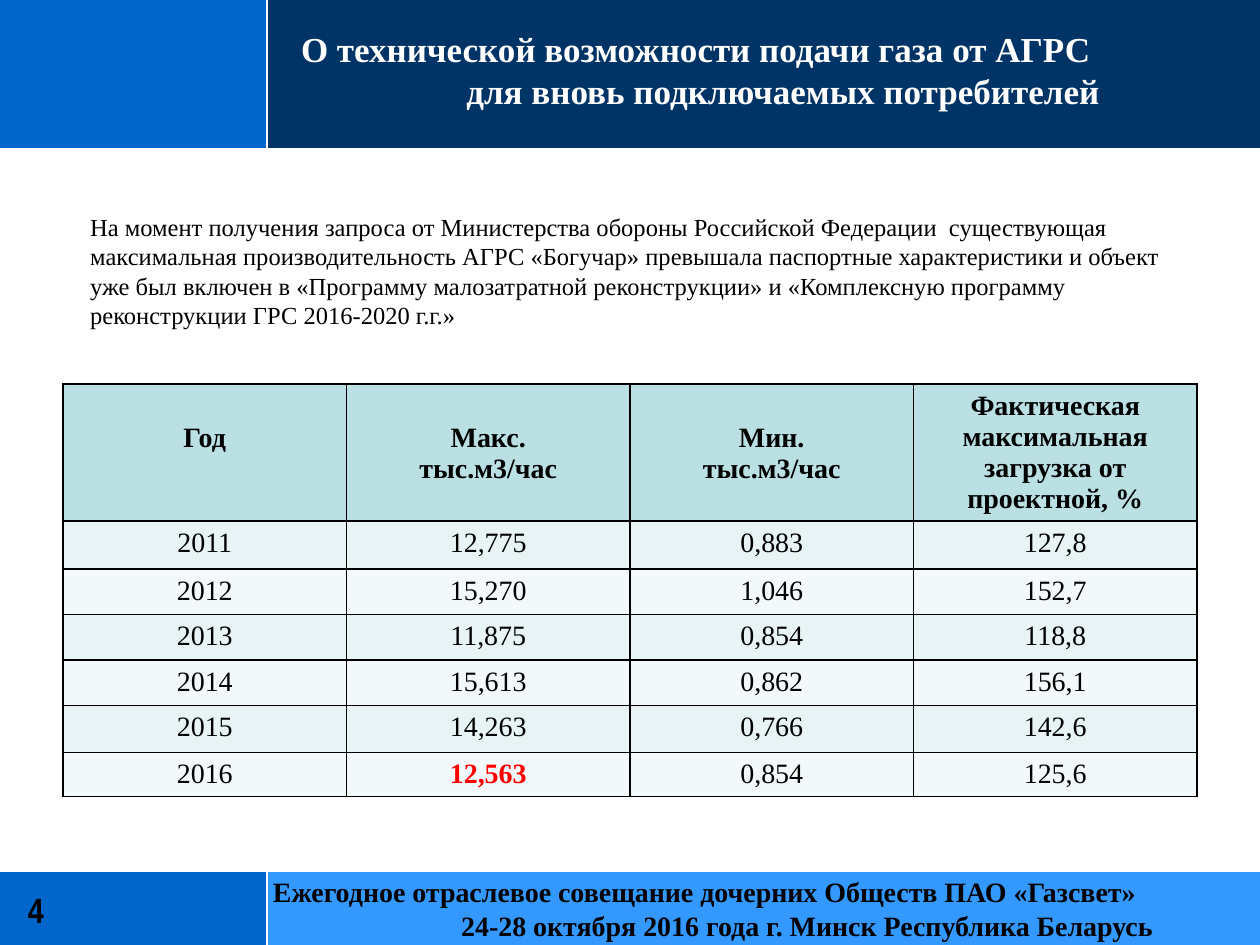
from lxml import etree
from pptx import Presentation
from pptx.dml.color import RGBColor
from pptx.enum.shapes import MSO_CONNECTOR, MSO_SHAPE
from pptx.enum.text import MSO_ANCHOR, MSO_AUTO_SIZE, PP_ALIGN
from pptx.oxml.ns import qn
from pptx.util import Pt

RECTANGLE, STRAIGHT = MSO_SHAPE.RECTANGLE, MSO_CONNECTOR.STRAIGHT
TOP, MIDDLE, BOTTOM = MSO_ANCHOR.TOP, MSO_ANCHOR.MIDDLE, MSO_ANCHOR.BOTTOM
LEFT, CENTER = PP_ALIGN.LEFT, PP_ALIGN.CENTER

BLUE = RGBColor(0x00, 0x66, 0xCC)
NAVY = RGBColor(0x00, 0x33, 0x66)
SKY = RGBColor(0x33, 0x99, 0xFF)
WHITE = RGBColor(0xFF, 0xFF, 0xFF)
BLACK = RGBColor(0x00, 0x00, 0x00)
RED = RGBColor(0xFF, 0x00, 0x00)
HEADER_FILL = RGBColor(0xBB, 0xE0, 0xE3)
ROW_FILLS = [RGBColor(0xE7, 0xF3, 0xF4), RGBColor(0xF3, 0xF9, 0xFA)]
SERIF, NARROW = "Times New Roman", "Arial Narrow"

# Content
TITLE = ["О технической возможности подачи газа от АГРС",
         "для вновь подключаемых потребителей"]
BODY = ["На момент получения запроса от Министерства обороны Российской "
        "Федерации  существующая максимальная производительность АГРС «Богучар» "
        "превышала паспортные характеристики и объект уже был включен в "
        "«Программу малозатратной реконструкции» и «Комплексную программу "
        "реконструкции ГРС 2016-2020 г.г.»"]
FOOTER = ["Ежегодное отраслевое совещание дочерних Обществ ПАО «Газсвет»",
          "24-28 октября 2016 года г. Минск Республика Беларусь"]
PAGE_NUMBER = ["4"]
HEADERS = ["Год", "Макс.\nтыс.м3/час", "Мин.\nтыс.м3/час",
           "Фактическая максимальная загрузка от проектной, %"]
ROWS = [
    ["2011", "12,775", "0,883", "127,8"],
    ["2012", "15,270", "1,046", "152,7"],
    ["2013", "11,875", "0,854", "118,8"],
    ["2014", "15,613", "0,862", "156,1"],
    ["2015", "14,263", "0,766", "142,6"],
    ["2016", "12,563", "0,854", "125,6"],
]
HIGHLIGHT = (6, 1)

# Layout in points
PAGE_W, PAGE_H = 720, 540
SIDE_W, HEAD_H, FOOT_Y = 152.6, 85, 497.5
TABLE_X, TABLE_Y, COLUMN_W = 36, 219.5, 162
ROW_HEIGHTS = [74, 27.4, 26, 26, 26, 26.8, 25.2]
LOWERED_TOP = 22  # moves the short headings down by one line


def add_band(page, x, y, width, height, color):
    band = page.shapes.add_shape(RECTANGLE, Pt(x), Pt(y), Pt(width), Pt(height))
    band.shadow.inherit = False
    band.fill.solid()
    band.fill.fore_color.rgb = color
    band.line.fill.background()


def add_rule(page, x1, y1, x2, y2):
    rule = page.shapes.add_connector(STRAIGHT, Pt(x1), Pt(y1), Pt(x2), Pt(y2))
    rule.line.color.rgb = WHITE
    rule.line.width = Pt(1.25)
    etree.SubElement(rule._element.spPr, qn("a:effectLst"))


def format_text(frame, size, color=BLACK, bold=False, align=LEFT, font=SERIF):
    for paragraph in frame.paragraphs:
        paragraph.alignment = align
        for span in paragraph.runs:
            span.font.name, span.font.size = font, Pt(size)
            span.font.bold, span.font.color.rgb = bold, color


def fill_box(box, bounds, lines, anchor, size, inset=0, indents=(), **style):
    box.left, box.top, box.width, box.height = (Pt(value) for value in bounds)
    frame = box.text_frame
    frame.word_wrap = True
    frame.auto_size = MSO_AUTO_SIZE.NONE
    frame.vertical_anchor = anchor
    frame.margin_left = frame.margin_right = Pt(inset)
    frame.margin_top = frame.margin_bottom = 0
    frame.text = "\n".join(lines)
    for paragraph, indent in zip(frame.paragraphs, indents):
        properties = paragraph._p.get_or_add_pPr()
        properties.set("marL", str(Pt(indent)))
        properties.set("indent", "0")
    format_text(frame, size, **style)


def add_box(page, *args, **kwargs):
    fill_box(page.shapes.add_textbox(0, 0, 0, 0), *args, **kwargs)


def set_borders(cell):
    properties = cell._tc.get_or_add_tcPr()
    for position, side in enumerate(("a:lnL", "a:lnR", "a:lnT", "a:lnB")):
        border = etree.Element(qn(side), w=str(Pt(1)))
        fill = etree.SubElement(border, qn("a:solidFill"))
        etree.SubElement(fill, qn("a:srgbClr"), val=str(BLACK))
        properties.insert(position, border)


def add_load_table(page):
    data = [HEADERS] + ROWS
    columns = len(HEADERS)
    table = page.shapes.add_table(
        len(data), columns, Pt(TABLE_X), Pt(TABLE_Y),
        Pt(columns * COLUMN_W), Pt(sum(ROW_HEIGHTS))).table
    for column in table.columns:
        column.width = Pt(COLUMN_W)
    for r, values in enumerate(data):
        table.rows[r].height = Pt(ROW_HEIGHTS[r])
        for c, value in enumerate(values):
            cell = table.cell(r, c)
            cell.text = value
            cell.vertical_anchor = TOP
            if r == 0 and c < columns - 1:
                cell.margin_top = Pt(LOWERED_TOP)
            cell.fill.solid()
            cell.fill.fore_color.rgb = ROW_FILLS[(r - 1) % 2] if r else HEADER_FILL
            marked = (r, c) == HIGHLIGHT
            format_text(cell.text_frame, 16, RED if marked else BLACK,
                        bold=marked or r == 0, align=CENTER)
            set_borders(cell)


def main():
    deck = Presentation()
    deck.slide_width, deck.slide_height = Pt(PAGE_W), Pt(PAGE_H)
    page = deck.slides.add_slide(deck.slide_layouts[5])
    title = page.shapes.title

    # Header and footer bands with white rules
    for y, height, color in ((FOOT_Y, PAGE_H - FOOT_Y, SKY), (0, HEAD_H, NAVY)):
        add_band(page, 0, y, SIDE_W, height, BLUE)
        add_band(page, SIDE_W, y, PAGE_W - SIDE_W, height, color)
        add_rule(page, SIDE_W, y, SIDE_W, y + height)
    for y in (FOOT_Y, HEAD_H):
        add_rule(page, 0, y, PAGE_W, y)

    # Title, raised above the bands
    page.shapes._spTree.append(title._element)
    fill_box(title, (170, 0, 550, 64), TITLE, BOTTOM, 20,
             indents=(2, 96.5), color=WHITE, bold=True)

    # Body text and table
    add_box(page, (34.5, 98.5, 663, 112.5), BODY, MIDDLE, 14, inset=17)
    add_load_table(page)

    # Page number and footer
    add_box(page, (16, 501, 117, 37.5), PAGE_NUMBER, MIDDLE, 20,
            bold=True, font=NARROW)
    add_box(page, (155, 498, 565, 42), FOOTER, MIDDLE, 16,
            indents=(1, 108.5), bold=True)

    deck.save("out.pptx")


if __name__ == "__main__":
    main()
